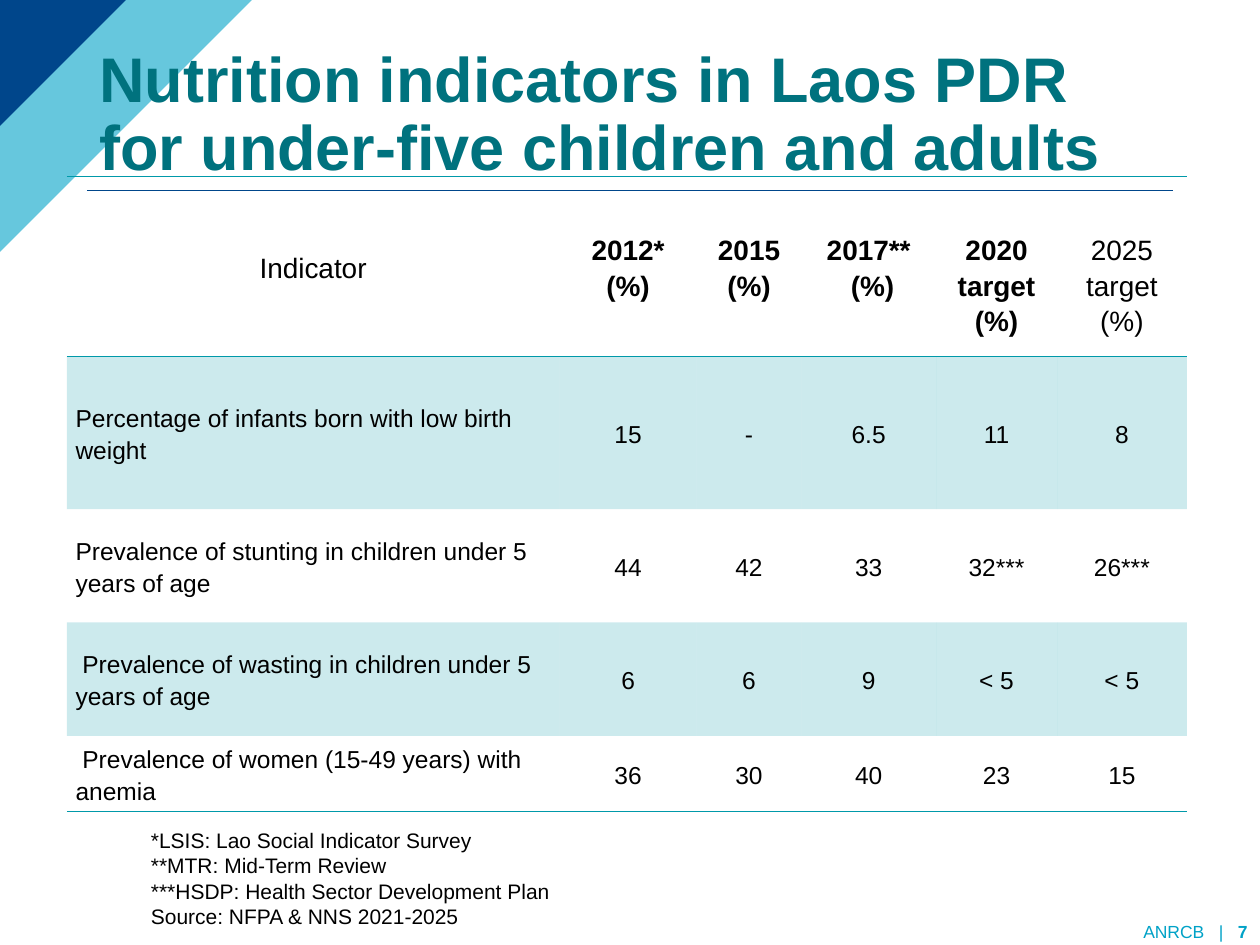
from lxml import etree
from pptx import Presentation, util as u
from pptx.dml.color import RGBColor
from pptx.enum import shapes, text
from pptx.oxml.ns import qn

THEME = dict(
    font="Arial", ink="000000", title="00727E", rule="0099A9", navy="00468B", sky="00A2C7",
    title_size=36, head_size=16, body_size=14, note_size=12, footer_size=10,
)
NO_STYLE = "{2D5ABB26-0587-4C30-8999-92F81FD0307C}"
LEFT, CENTER, RIGHT = text.PP_ALIGN.LEFT, text.PP_ALIGN.CENTER, text.PP_ALIGN.RIGHT
TOP, MIDDLE, BOTTOM = text.MSO_ANCHOR.TOP, text.MSO_ANCHOR.MIDDLE, text.MSO_ANCHOR.BOTTOM

TITLE = "Nutrition indicators in Laos PDR for under-five children and adults"
# heading, bold, extra top margin
HEADINGS = [
    ("Indicator", False, 0),
    ("2012* (%)", True, 0),
    ("2015 (%)", True, 0),
    ("2017**\n (%)", True, 0),
    ("2020 target (%)", True, 0.28),
    ("2025 target (%)", False, 0.28),
]
INDICATORS = [
    ("Percentage of infants born with low birth weight", "15", "-", "6.5", "11", "8"),
    ("Prevalence of stunting in children under 5 years of age", "44", "42", "33", "32***", "26***"),
    (" Prevalence of wasting in children under 5 years of age", "6", "6", "9", "< 5", "< 5"),
    (" Prevalence of women (15-49 years) with anemia", "36", "30", "40", "23", "15"),
]
COLUMN_WIDTHS = [3.91, 1.09, 0.83, 1.07, 0.96, 1.03]
ROW_HEIGHTS = [1.43, 1.21, 0.9, 0.9, 0.6]
NOTES = """*LSIS: Lao Social Indicator Survey
**MTR: Mid-Term Review
***HSDP: Health Sector Development Plan
Source: NFPA & NNS 2021-2025"""
# text, bold, letter spacing in hundredths of a point
FOOTER = [("ANRCB", False, 0), (" ", False, 556), ("|", False, 0), (" ", False, 556), ("7", True, 0)]
CORNER = [(1.62, 1.64, "sky", 60), (1.37, 1.39, "navy", 100)]  # width, height, colour, opacity


def color(name):
    return RGBColor.from_string(THEME[name])


def write(frame, content, size, ink="ink", bold=False, align=LEFT, spacing=None):
    """Write lines of text, or one line given as (text, bold, letter spacing) runs."""
    frame.word_wrap = True
    lines = [[(line, bold, 0)] for line in content.split("\n")] if isinstance(content, str) else [content]
    for i, runs in enumerate(lines):
        paragraph = frame.add_paragraph() if i else frame.paragraphs[0]
        paragraph.alignment, paragraph.line_spacing = align, spacing
        for words, heavy, tracking in runs:
            run = paragraph.add_run()
            run.text = words
            run.font.name, run.font.size, run.font.bold = THEME["font"], u.Pt(THEME[size]), heavy
            run.font.color.rgb = color(ink)
            if tracking:
                run.font._element.set("spc", str(tracking))


def add_text(slide, box, content, anchor=TOP, **style):
    frame = slide.shapes.add_textbox(*map(u.Inches, box)).text_frame
    frame.vertical_anchor = anchor
    write(frame, content, **style)


def set_fill(fill, name, opacity=100):
    fill.solid()
    fill.fore_color.rgb = color(name)
    if opacity < 100:
        tint = fill._xPr.find(qn("a:solidFill"))[0]
        etree.SubElement(tint, qn("a:alpha")).set("val", str(opacity * 1000))


def add_borders(cell, sides):
    """Rule the given sides ('T', 'B') of a cell; lines must precede the fill."""
    properties = cell._tc.get_or_add_tcPr()
    for i, side in enumerate(sides):
        line = etree.Element(qn(f"a:ln{side}"), w=str(u.Pt(1)))
        fill = etree.SubElement(line, qn("a:solidFill"))
        etree.SubElement(fill, qn("a:srgbClr"), val=THEME["rule"])
        properties.insert(i, line)


def add_corner(slide):
    for width, height, name, opacity in CORNER:
        builder = slide.shapes.build_freeform(0, 0, scale=u.Inches(1))
        builder.add_line_segments([(width, 0), (0, height)], close=True)
        triangle = builder.convert_to_shape()
        triangle.shadow.inherit = False
        triangle.line.fill.background()
        set_fill(triangle.fill, name, opacity)


def add_title_rule(slide):
    rule = slide.shapes.add_connector(
        shapes.MSO_CONNECTOR.STRAIGHT, *map(u.Inches, (0.69, 1.51, 9.31, 1.51)))
    rule.line.color.rgb, rule.line.width = color("navy"), u.Pt(0.75)
    etree.SubElement(rule._element.spPr, qn("a:effectLst"))


def add_indicator_table(slide):
    size = len(ROW_HEIGHTS), len(COLUMN_WIDTHS)
    box = (0.53, 1.4, sum(COLUMN_WIDTHS), sum(ROW_HEIGHTS))
    table = slide.shapes.add_table(*size, *map(u.Inches, box)).table
    table.first_row = table.horz_banding = False
    table._tbl.tblPr.find(qn("a:tableStyleId")).text = NO_STYLE
    for column, width in zip(table.columns, COLUMN_WIDTHS):
        column.width = u.Inches(width)
    for row, height in zip(table.rows, ROW_HEIGHTS):
        row.height = u.Inches(height)

    body = [[(words, False, 0) for words in row] for row in INDICATORS]
    for r, row in enumerate([HEADINGS] + body):
        for c, (words, bold, top) in enumerate(row):
            cell = table.cell(r, c)
            cell.vertical_anchor = MIDDLE
            cell.margin_left = cell.margin_right = u.Inches(0.07)
            cell.margin_top, cell.margin_bottom = u.Inches(top), 0
            write(cell.text_frame, words, size="body_size" if r else "head_size", bold=bold,
                  align=LEFT if r and not c else CENTER, spacing=1.15)
            if r % 2:
                set_fill(cell.fill, "rule", 20)
            else:
                cell.fill.background()
            if r == 0:
                add_borders(cell, "TB")
            elif r == len(INDICATORS):
                add_borders(cell, "B")


def main():
    deck = Presentation()
    deck.slide_width, deck.slide_height = u.Inches(10), u.Inches(7.5)
    slide = deck.slides.add_slide(deck.slide_layouts[6])
    add_title_rule(slide)
    add_corner(slide)
    add_text(slide, (0.69, 0.4, 8.62, 1.11), TITLE, anchor=BOTTOM,
             size="title_size", ink="title", bold=True, spacing=0.9)
    add_text(slide, (8.35, 7.29, 1.65, 0.21), FOOTER, anchor=MIDDLE,
             size="footer_size", ink="sky", align=RIGHT)
    add_indicator_table(slide)
    add_text(slide, (1.1, 6.52, 4.17, 0.91), NOTES, size="note_size")
    deck.save("out.pptx")


if __name__ == "__main__":
    main()
